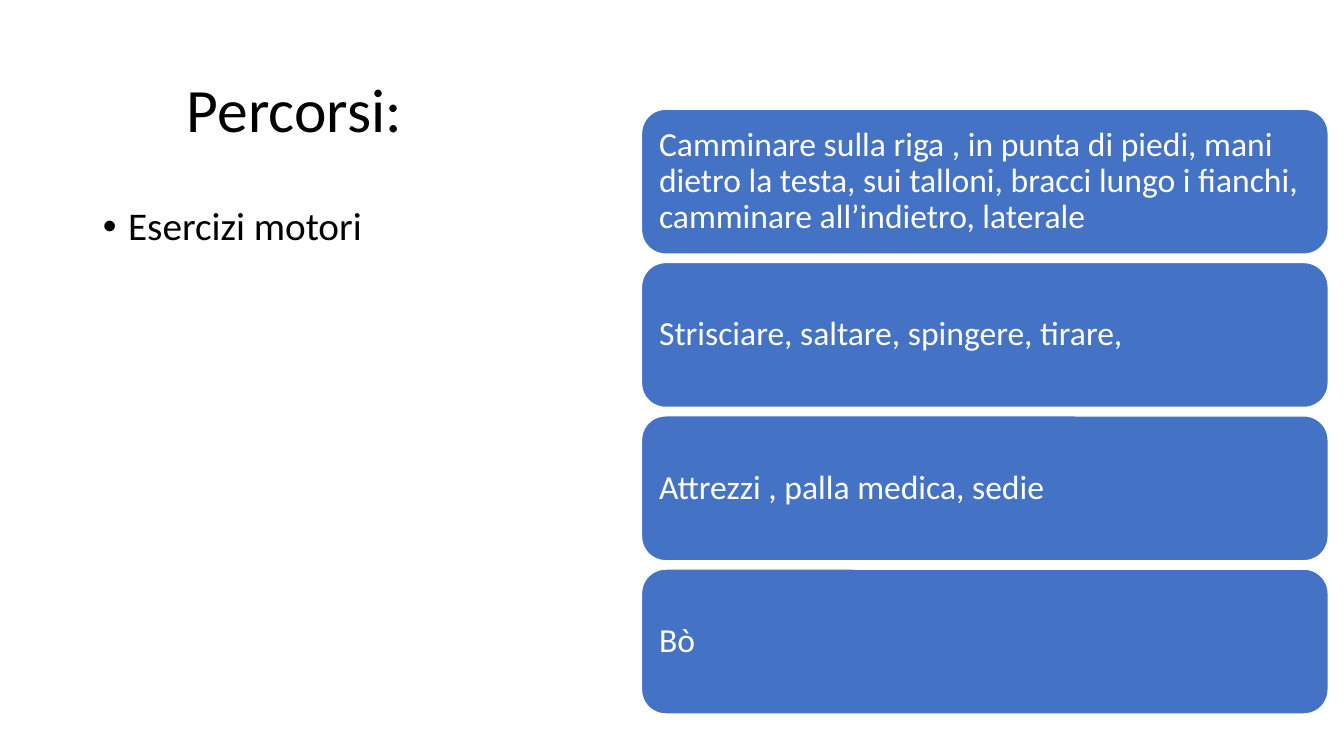
from lxml import etree
from pptx import Presentation, util as u
from pptx.dml.color import RGBColor
from pptx.enum import shapes, text
from pptx.oxml.ns import qn

PX = 9525
BLACK, WHITE, BLUE = "000000", "FFFFFF", "4472C4"


def hue(code):
    return RGBColor.from_string(code)


def write(shape, words, size, color, anchor, pad_x, pad_y):
    """Set the frame and its single paragraph, and return the paragraph."""
    frame = shape.text_frame
    frame.word_wrap = True
    frame.vertical_anchor = anchor
    frame.margin_left = frame.margin_right = pad_x * PX
    frame.margin_top = frame.margin_bottom = pad_y * PX
    para = frame.paragraphs[0]
    para.alignment = text.PP_ALIGN.LEFT
    para.line_spacing = 0.9
    run = para.add_run()
    run.text = words
    run.font.name = "Calibri"
    run.font.size = u.Pt(size)
    run.font.color.rgb = hue(color)
    return para


deck = Presentation()
deck.slide_width, deck.slide_height = 1280 * PX, 720 * PX
slide = deck.slides.add_slide(deck.slide_layouts[6])
TOP, MIDDLE = text.MSO_ANCHOR.TOP, text.MSO_ANCHOR.MIDDLE

title = slide.shapes.add_textbox(168 * PX, 38 * PX, 1024 * PX, 139 * PX)
write(title, "Percorsi:", 44, BLACK, MIDDLE, 10, 5)

body = slide.shapes.add_textbox(88 * PX, 192 * PX, 544 * PX, 457 * PX)
para = write(body, "Esercizi motori", 28, BLACK, TOP, 10, 5)
props = para._p.get_or_add_pPr()
props.set("marL", str(24 * PX))
props.set("indent", str(-24 * PX))
etree.SubElement(props, qn("a:buFont"), typeface="Arial")
etree.SubElement(props, qn("a:buChar"), char="•")

tasks = [
    "Camminare sulla riga , in punta di piedi, mani dietro la testa, "
    "sui talloni, bracci lungo i fianchi, camminare all’indietro, laterale",
    "Strisciare, saltare, spingere, tirare,",
    "Attrezzi , palla medica, sedie",
    "Bò",
]
for row, task in enumerate(tasks):
    card = slide.shapes.add_shape(
        shapes.MSO_SHAPE.ROUNDED_RECTANGLE,
        611 * PX, (104 + 146 * row) * PX, 654 * PX, 138 * PX)
    card.shadow.inherit = False
    card.fill.solid()
    card.fill.fore_color.rgb = hue(BLUE)
    card.line.color.rgb = hue(WHITE)
    card.line.width = u.Pt(1)
    # The rounded corners already push the text in by 7 px.
    write(card, task, 24, WHITE, MIDDLE, 10, 10)

deck.save("out.pptx")
